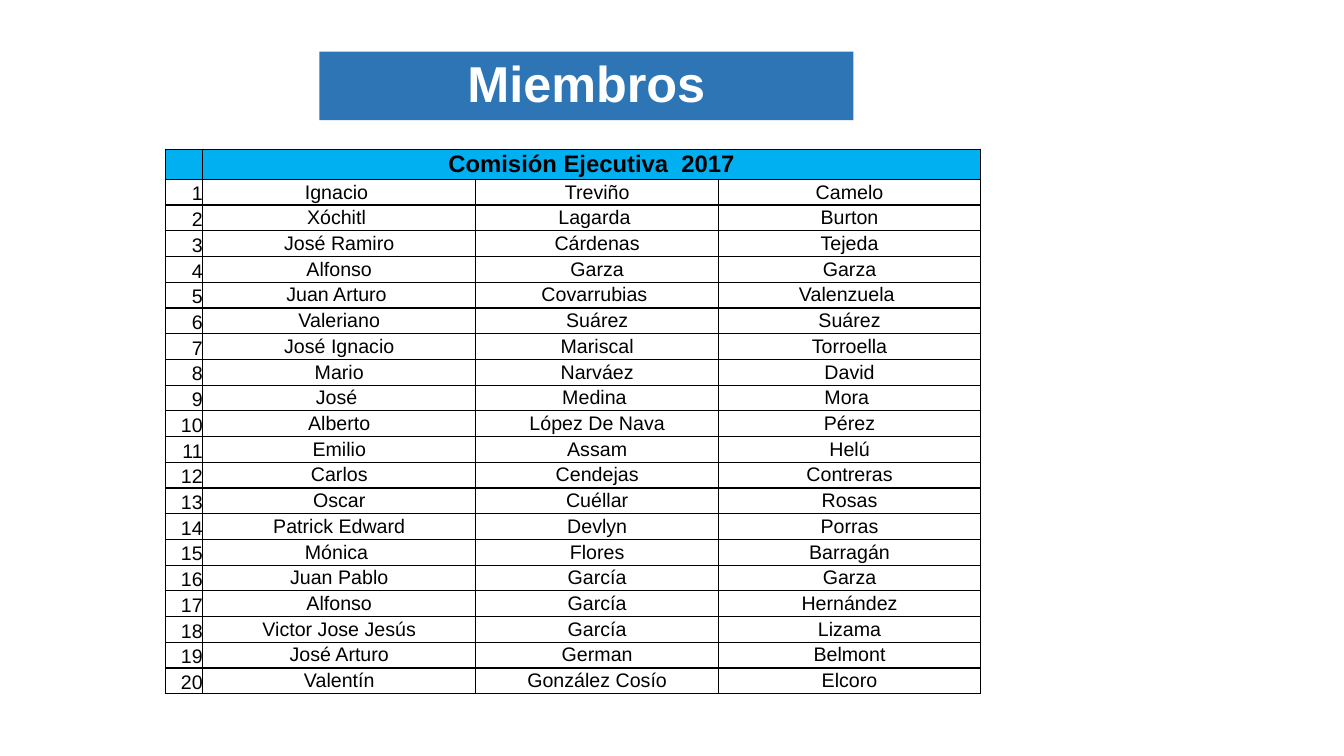
from lxml import etree
from pptx import Presentation
from pptx.dml.color import RGBColor
from pptx.enum.shapes import MSO_SHAPE
from pptx.enum.text import MSO_ANCHOR, PP_ALIGN
from pptx.oxml.ns import qn
from pptx.util import Cm, Pt

RECTANGLE = MSO_SHAPE.RECTANGLE
MIDDLE, BOTTOM = MSO_ANCHOR.MIDDLE, MSO_ANCHOR.BOTTOM
CENTER, RIGHT = PP_ALIGN.CENTER, PP_ALIGN.RIGHT

BLACK = RGBColor(0x00, 0x00, 0x00)
WHITE = RGBColor(0xFF, 0xFF, 0xFF)
TITLE_BLUE = RGBColor(0x2E, 0x75, 0xB6)
HEADER_BLUE = RGBColor(0x00, 0xB0, 0xF0)

TITLE_FONT = {"name": "Arial", "size": Pt(36), "bold": True}
HEADER_FONT = {"name": "Arial", "size": Pt(17), "bold": True}
BODY_FONT = {"name": "Arial", "size": Pt(14), "bold": False}
NO_MARGINS = {"margin_left": 0, "margin_right": 0, "margin_top": 0, "margin_bottom": 0}

TITLE_BOX = (Cm(8.05), Cm(1.3), Cm(13.46), Cm(1.73))
TABLE_BOX = (Cm(4.17), Cm(3.76), Cm(20.54), Cm(13.72))
COLUMN_WIDTHS = [Cm(0.94), Cm(6.88), Cm(6.12), Cm(6.6)]
HEADER_HEIGHT = Cm(0.76)

MEMBERS = [
    ("Ignacio ", "Treviño", "Camelo"),
    ("Xóchitl ", "Lagarda ", "Burton"),
    ("José Ramiro", "Cárdenas", "Tejeda"),
    ("Alfonso", "Garza", "Garza"),
    ("Juan Arturo ", "Covarrubias ", "Valenzuela "),
    ("Valeriano", "Suárez", "Suárez"),
    ("José Ignacio", "Mariscal", "Torroella"),
    ("Mario", "Narváez", "David"),
    ("José ", "Medina ", "Mora "),
    ("Alberto", "López De Nava", "Pérez"),
    ("Emilio", "Assam", "Helú"),
    ("Carlos", "Cendejas", "Contreras"),
    ("Oscar", "Cuéllar", "Rosas"),
    ("Patrick Edward", "Devlyn", "Porras"),
    ("Mónica ", "Flores", "Barragán"),
    ("Juan Pablo", "García", "Garza"),
    ("Alfonso", "García", "Hernández"),
    ("Victor Jose Jesús", "García", "Lizama"),
    ("José Arturo", "German", "Belmont"),
    ("Valentín", "González Cosío", "Elcoro"),
]


def apply_format(target, values):
    """Set each named attribute on the target."""
    for name, value in values.items():
        setattr(target, name, value)


def write_text(paragraph, text, font, color, alignment):
    """Put one formatted run into a paragraph."""
    paragraph.alignment = alignment
    run = paragraph.add_run()
    run.text = text
    apply_format(run.font, font)
    run.font.color.rgb = color


def add_borders(cell):
    """Draw a thin black line on all four sides of a cell."""
    properties = cell._tc.get_or_add_tcPr()
    for index, side in enumerate(("a:lnL", "a:lnR", "a:lnT", "a:lnB")):
        line = etree.Element(qn(side), w=str(Pt(1)))
        fill = etree.SubElement(line, qn("a:solidFill"))
        etree.SubElement(fill, qn("a:srgbClr"), val=str(BLACK))
        properties.insert(index, line)


def fill_cell(cell, text, font, background, alignment=CENTER, anchor=MIDDLE):
    """Write and style one table cell."""
    apply_format(cell, {**NO_MARGINS, "vertical_anchor": anchor})
    cell.fill.solid()
    cell.fill.fore_color.rgb = background
    add_borders(cell)
    write_text(cell.text_frame.paragraphs[0], text, font, BLACK, alignment)


def add_title(slide, box):
    """Add the blue title bar."""
    shape = slide.shapes.add_shape(RECTANGLE, *box)
    shape.shadow.inherit = False
    shape.fill.solid()
    shape.fill.fore_color.rgb = TITLE_BLUE
    shape.line.fill.background()
    frame = shape.text_frame
    apply_format(frame, {**dict.fromkeys(NO_MARGINS, Cm(0.25)),
                         "word_wrap": True, "vertical_anchor": MIDDLE})
    paragraph = frame.paragraphs[0]
    paragraph.line_spacing = 0.9
    write_text(paragraph, "Miembros", TITLE_FONT, WHITE, CENTER)


def add_members_table(slide, box):
    """Add the numbered table of committee members."""
    height = box[3]
    table = slide.shapes.add_table(len(MEMBERS) + 1, len(COLUMN_WIDTHS), *box).table
    apply_format(table, {"first_row": False, "horz_banding": False})
    for column, width in zip(table.columns, COLUMN_WIDTHS):
        column.width = width
    for row in table.rows:
        row.height = (height - HEADER_HEIGHT) // len(MEMBERS)
    table.rows[0].height = HEADER_HEIGHT

    for index, text in enumerate(("", "Comisión Ejecutiva  2017", "", "")):
        fill_cell(table.cell(0, index), text, HEADER_FONT, HEADER_BLUE)
    table.cell(0, 1).merge(table.cell(0, 3))

    for number, names in enumerate(MEMBERS, start=1):
        fill_cell(table.cell(number, 0), str(number), BODY_FONT, WHITE, RIGHT, BOTTOM)
        for index, name in enumerate(names, start=1):
            fill_cell(table.cell(number, index), name, BODY_FONT, WHITE)


def main():
    """Build and save the presentation."""
    presentation = Presentation()
    presentation.slide_width = Cm(33.87)
    presentation.slide_height = Cm(19.05)
    slide = presentation.slides.add_slide(presentation.slide_layouts[6])
    add_members_table(slide, TABLE_BOX)
    add_title(slide, TITLE_BOX)
    presentation.save("out.pptx")


if __name__ == "__main__":
    main()
